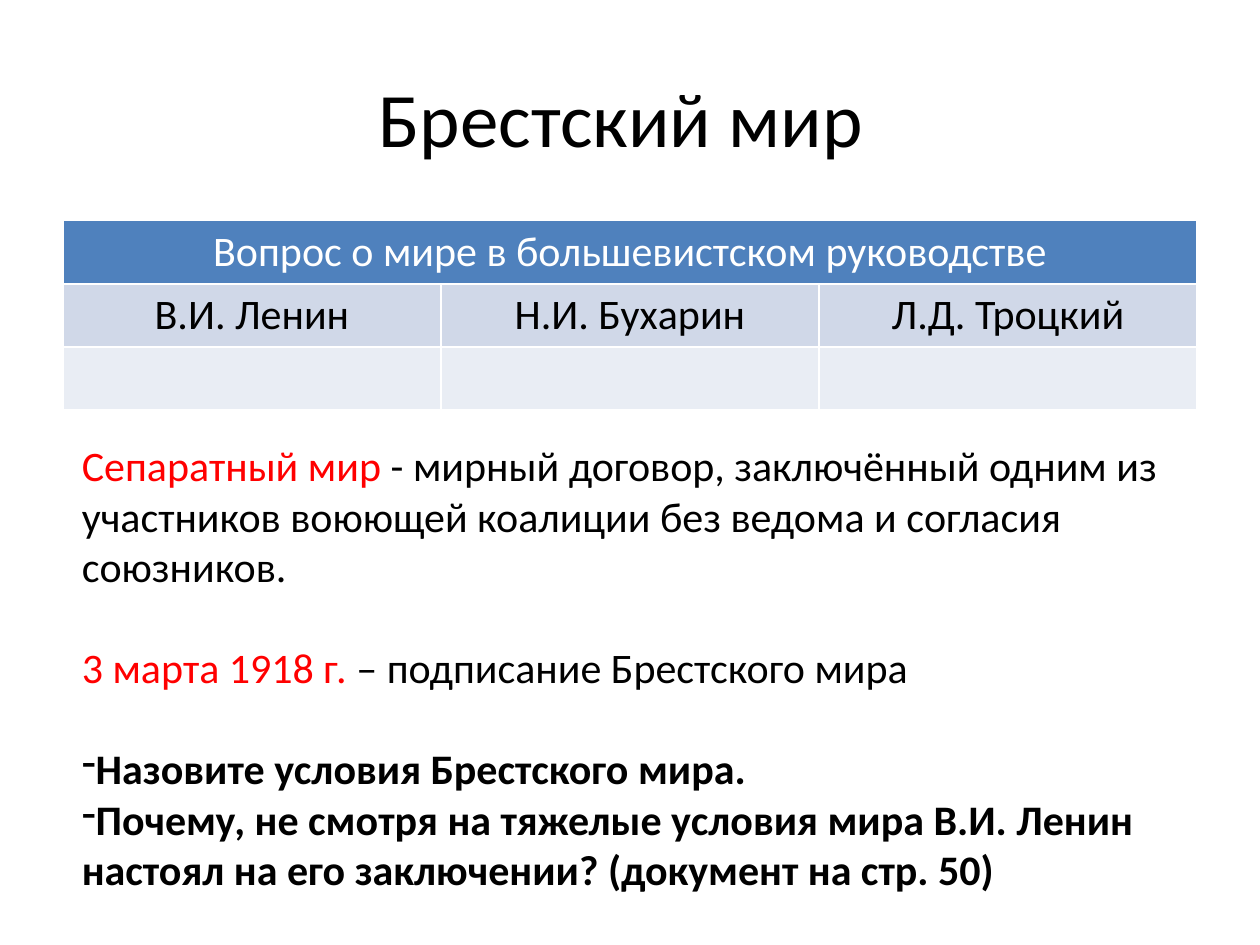
from pptx import Presentation
from pptx.dml.color import RGBColor
from pptx.enum.text import MSO_ANCHOR, PP_ALIGN
from pptx.oxml.ns import qn
from pptx.util import Cm, Pt
from lxml.etree import SubElement

COLOURS = {
    "text": "000000",
    "accent": "FF0000",
    "header": "4F81BD",
    "header_text": "FFFFFF",
    "names": "D0D8E8",
    "answers": "E9EDF4",
}


class LessonSlide:
    """Holds the text style and the current slide, and adds elements to it."""

    def __init__(self, slide, font="Calibri", size=24):
        self.slide = slide
        self.font = font
        self.size = size

    def add_words(self, paragraph, words, colour="text", **changes):
        run = paragraph.add_run()
        run.text = words
        style = {"name": self.font, "size": Pt(self.size), "bold": False, **changes}
        for attribute, value in style.items():
            setattr(run.font, attribute, value)
        run.font.color.rgb = RGBColor.from_string(COLOURS[colour])

    def add_frame(self, left, top, width, height, anchor):
        area = self.slide.shapes.add_textbox(Cm(left), Cm(top), Cm(width), Cm(height))
        area.text_frame.word_wrap = True
        area.text_frame.vertical_anchor = anchor
        return area.text_frame

    def add_title(self, words, *place):
        heading = self.add_frame(*place, MSO_ANCHOR.MIDDLE).paragraphs[0]
        heading.alignment = PP_ALIGN.CENTER
        self.add_words(heading, words, size=Pt(44))

    def add_opinions(self, header, names, left, top, width, height):
        opinions = self.slide.shapes.add_table(
            3, len(names), Cm(left), Cm(top), Cm(width), Cm(height)
        ).table
        opinions.cell(0, 0).merge(opinions.cell(0, len(names) - 1))
        rows = [
            ("header", "header_text", [header]),
            ("names", "text", names),
            ("answers", "text", []),
        ]
        for row, (fill, colour, labels) in zip(opinions.rows, rows):
            for cell in row.cells:
                cell.fill.solid()
                cell.fill.fore_color.rgb = RGBColor.from_string(COLOURS[fill])
            for cell, label in zip(row.cells, labels):
                label_line = cell.text_frame.paragraphs[0]
                label_line.alignment = PP_ALIGN.CENTER
                self.add_words(label_line, label, colour)

    def add_notes(self, facts, questions, gap, *place):
        body = self.add_frame(*place, MSO_ANCHOR.TOP)
        line = body.paragraphs[0]
        for term, meaning in facts:
            self.add_words(line, term, "accent")
            self.add_words(line, meaning)
            line.space_after = Pt(gap)
            line = body.add_paragraph()
        for number, question in enumerate(questions):
            if number:
                line = body.add_paragraph()
            self.add_words(line, question, bold=True)
            properties = line._p.get_or_add_pPr()
            for attribute in ("marL", "indent"):
                properties.set(attribute, "0")
            SubElement(properties, qn("a:buFontTx"))
            SubElement(properties, qn("a:buChar"), char="-")


def main():
    presentation = Presentation()
    presentation.slide_width, presentation.slide_height = Cm(25.4), Cm(19.05)
    lesson = LessonSlide(presentation.slides.add_slide(presentation.slide_layouts[6]))
    lesson.add_title("Брестский мир ", 1.27, 0.76, 22.86, 3.18)
    lesson.add_opinions(
        "Вопрос о мире в большевистском руководстве",
        ["В.И. Ленин", "Н.И. Бухарин", "Л.Д. Троцкий"],
        1.27, 4.45, 22.86, 3.81,
    )
    lesson.add_notes(
        [
            (
                "Сепаратный мир ",
                "- мирный договор, заключённый одним из участников "
                "воюющей коалиции без ведома и согласия союзников.",
            ),
            ("3 марта 1918 г. ", "– подписание Брестского мира"),
        ],
        [
            "Назовите условия Брестского мира.",
            "Почему, не смотря на тяжелые условия мира В.И. Ленин "
            "настоял на его заключении? (документ на стр. 50)",
        ],
        29, 1.4, 8.74, 24, 9.5,
    )
    presentation.save("out.pptx")


if __name__ == "__main__":
    main()
